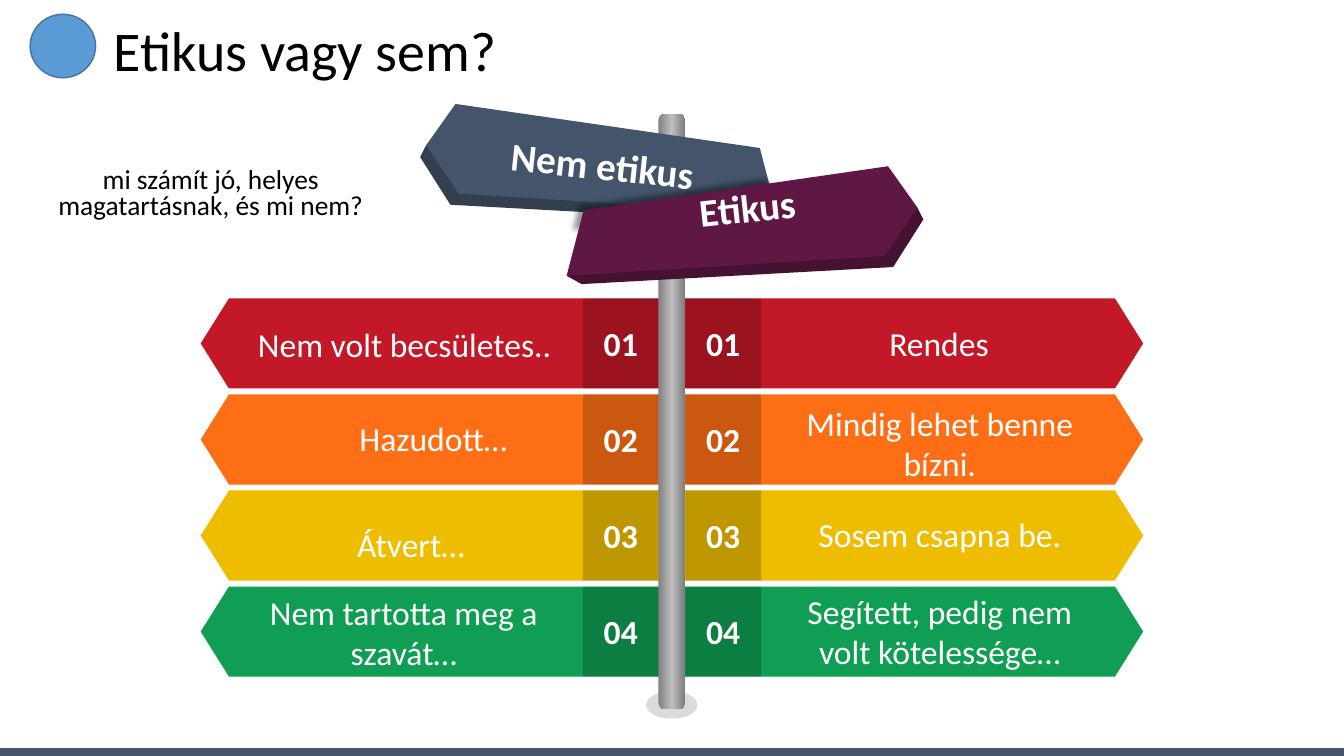
import copy
from lxml import etree
from pptx import Presentation
from pptx import util as u
from pptx.dml.color import RGBColor
from pptx.enum import shapes, text
from pptx.oxml import ns

BLACK = RGBColor(0x00, 0x00, 0x00)
WHITE = RGBColor(0xFF, 0xFF, 0xFF)
SLATE = RGBColor(0x44, 0x54, 0x6A)
SLATE_DARK = RGBColor(0x33, 0x3F, 0x4F)
PLUM = RGBColor(0x5E, 0x18, 0x43)
PLUM_DARK = RGBColor(0x46, 0x12, 0x32)
RED = RGBColor(0xC3, 0x18, 0x28)
ORANGE = RGBColor(0xFE, 0x6F, 0x15)
YELLOW = RGBColor(0xEE, 0xBD, 0x00)
GREEN = RGBColor(0x0F, 0x9E, 0x53)
BRIGHT_RED = RGBColor(0xFF, 0x00, 0x00)
GREY = RGBColor(0x80, 0x80, 0x80)
LIGHT_GREY = RGBColor(0xBF, 0xBF, 0xBF)
BLUE = RGBColor(0x5B, 0x9B, 0xD5)
BLUE_DARK = RGBColor(0x43, 0x73, 0x9E)

LEFT = text.PP_ALIGN.LEFT
CENTER = text.PP_ALIGN.CENTER
JUSTIFY = text.PP_ALIGN.JUSTIFY
SHAPE = shapes.MSO_SHAPE

presentation = Presentation()
presentation.slide_width = u.Cm(33.87)
presentation.slide_height = u.Cm(19.05)
slide = presentation.slides.add_slide(presentation.slide_layouts[6])


def paint(shape, colour, opacity=100):
    shape.shadow.inherit = False
    shape.line.fill.background()
    shape.fill.solid()
    shape.fill.fore_color.rgb = colour
    if opacity < 100:
        colour_element = shape._element.spPr.find(".//" + ns.qn("a:srgbClr"))
        etree.SubElement(colour_element, ns.qn("a:alpha"), val=str(opacity * 1000))
    return shape


def write(box, lines, size, colour=WHITE, align=CENTER, bold=False, spacing=1.0, wrap=True):
    shape = slide.shapes.add_textbox(*map(u.Cm, box))
    frame = shape.text_frame
    frame.word_wrap = wrap
    for index, line in enumerate(lines):
        paragraph = frame.paragraphs[0] if index == 0 else frame.add_paragraph()
        paragraph.alignment = align
        paragraph.line_spacing = spacing
        run = paragraph.add_run()
        run.text = line
        run.font.name = "Calibri"
        run.font.size = u.Pt(size)
        run.font.bold = bold
        run.font.color.rgb = colour
    return shape


paint(slide.shapes.add_shape(SHAPE.RECTANGLE, u.Cm(0), u.Cm(18.85), u.Cm(33.87), u.Cm(0.2)), SLATE)

title = write((2.62, 0.74, 11.13, 1.22), ["Etikus vagy sem?"], 40, BLACK, LEFT, spacing=0.9)
title.text_frame.vertical_anchor = text.MSO_ANCHOR.MIDDLE
write((0.46, 4.11, 9.7, 1.63), ["mi számít jó, helyes", "magatartásnak, és mi nem?"],
      19.6, BLACK, spacing=0.8)

rows = [
    (RED, ("Nem volt becsületes..", 6.25, 8.05, 8.41, LEFT), ("Rendes", 19.46, 8.0)),
    (ORANGE, ("Hazudott…", 8.81, 10.41, 4.72, JUSTIFY), ("Mindig lehet benne bízni.", 19.48, 10.03)),
    (YELLOW, ("Átvert…", 6.15, 13.08, 8.41, CENTER), ("Sosem csapna be.", 19.48, 12.83)),
    (GREEN, ("Nem tartotta meg a szavát…", 5.97, 14.78, 8.41, CENTER),
     ("Segített, pedig nem volt kötelessége…", 19.48, 14.76)),
]
for index, (colour, unethical, ethical) in enumerate(rows):
    top = 7.52 + index * 2.42
    for side, arrow_left, number_left in (("left", 5.06, 14.69), ("right", 16.59, 17.27)):
        arrow = paint(slide.shapes.add_shape(
            SHAPE.PENTAGON, u.Cm(arrow_left), u.Cm(top), u.Cm(12.22), u.Cm(2.27)), colour)
        arrow.adjustments[0] = 0.313
        if side == "left":
            arrow._element.spPr.find(ns.qn("a:xfrm")).set("flipH", "1")
        paint(slide.shapes.add_shape(
            SHAPE.RECTANGLE, u.Cm(number_left), u.Cm(top), u.Cm(1.91), u.Cm(2.27)), BLACK, 20)
        write((number_left + 0.27, top + 0.48, 1.37, 1.27), [f"{index + 1:02}"], 24,
              bold=True, wrap=False)
    label, left, label_top, width, align = unethical
    write((left, label_top, width, 1.27), [label], 24, align=align)
    label, left, label_top = ethical
    write((left, label_top, 8.41, 1.27), [label], 24)

paint(slide.shapes.add_shape(SHAPE.OVAL, u.Cm(16.28), u.Cm(17.42), u.Cm(1.3), u.Cm(0.69)), BLACK, 14)

pole = paint(slide.shapes.add_shape(
    SHAPE.ROUNDED_RECTANGLE, u.Cm(16.59), u.Cm(2.87), u.Cm(0.68), u.Cm(15)), GREY)
pole.adjustments[0] = 0.25
pole.fill.gradient()
pole.fill.gradient_angle = 0
first_stop = pole._element.spPr.find(".//" + ns.qn("a:gs"))
first_stop.addnext(copy.deepcopy(first_stop))
for stop, position, colour in zip(pole.fill.gradient_stops, (0, 0.5, 0.97), (GREY, LIGHT_GREY, GREY)):
    stop.position = position
    stop.color.rgb = colour

sign_edge = [(11.71, 4.67), (11.53, 4.85), (11.56, 4.88), (11.35, 5.16),
             (19.2, 5.59), (19.58, 5.38), (19.41, 5.31)]
sign_tip = [(10.92, 3.61), (10.74, 3.66), (10.59, 3.96), (11.35, 5.16),
            (11.48, 5.05), (11.56, 4.88), (11.63, 4.78)]
sign_face = [(19.15, 3.73), (11.48, 2.62), (10.74, 3.66), (11.56, 4.88), (19.58, 5.38)]
sign_shadow = [(14.76, 5.38), (19.46, 4.7), (19.86, 5.23), (14.61, 5.97)]

mirrored = [[(33.86 - x, y + 1.57) for x, y in outline]
            for outline in (sign_edge, sign_tip, sign_face)]
signs = [
    ("Nem etikus", 12.45, 3.43, 6.2,
     [(sign_edge, SLATE_DARK), (sign_tip, SLATE_DARK), (sign_face, SLATE)]),
    ("Etikus", 16.1, 4.5, -6.2,
     [(sign_shadow, BRIGHT_RED), *zip(mirrored, (PLUM_DARK, PLUM_DARK, PLUM))]),
]
for label, left, top, angle, pieces in signs:
    for outline, colour in pieces:
        points = [(u.Cm(x), u.Cm(y)) for x, y in outline]
        builder = slide.shapes.build_freeform(*points[0])
        builder.add_line_segments(points[1:], close=True)
        piece = paint(builder.convert_to_shape(), colour)
        if outline is sign_shadow:
            effects = piece._element.spPr.find(ns.qn("a:effectLst"))
            shadow = etree.SubElement(effects, ns.qn("a:outerShdw"), blurRad=str(u.Pt(4)),
                                      dist=str(u.Pt(7)), dir="13500000", rotWithShape="0")
            shadow_colour = etree.SubElement(shadow, ns.qn("a:srgbClr"), val="000000")
            etree.SubElement(shadow_colour, ns.qn("a:alpha"), val="40000")
    write((left, top, 5.46, 1.45), [label], 28, bold=True).rotation = angle

badge = paint(slide.shapes.add_shape(SHAPE.OVAL, u.Cm(0.76), u.Cm(0.36), u.Cm(1.65), u.Cm(1.6)), BLUE)
badge.line.color.rgb = BLUE_DARK
badge.line.width = u.Pt(1)

presentation.save("out.pptx")
